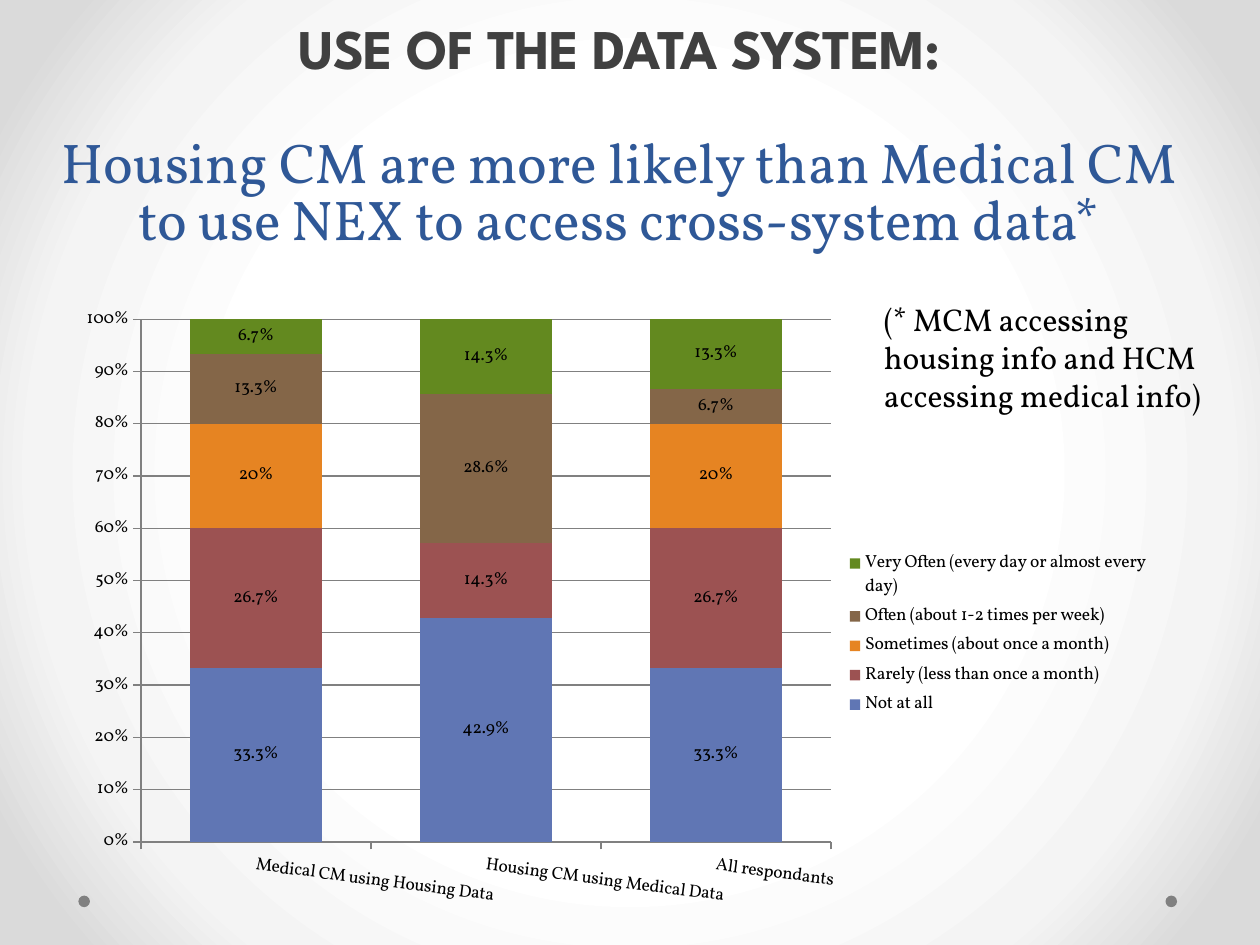
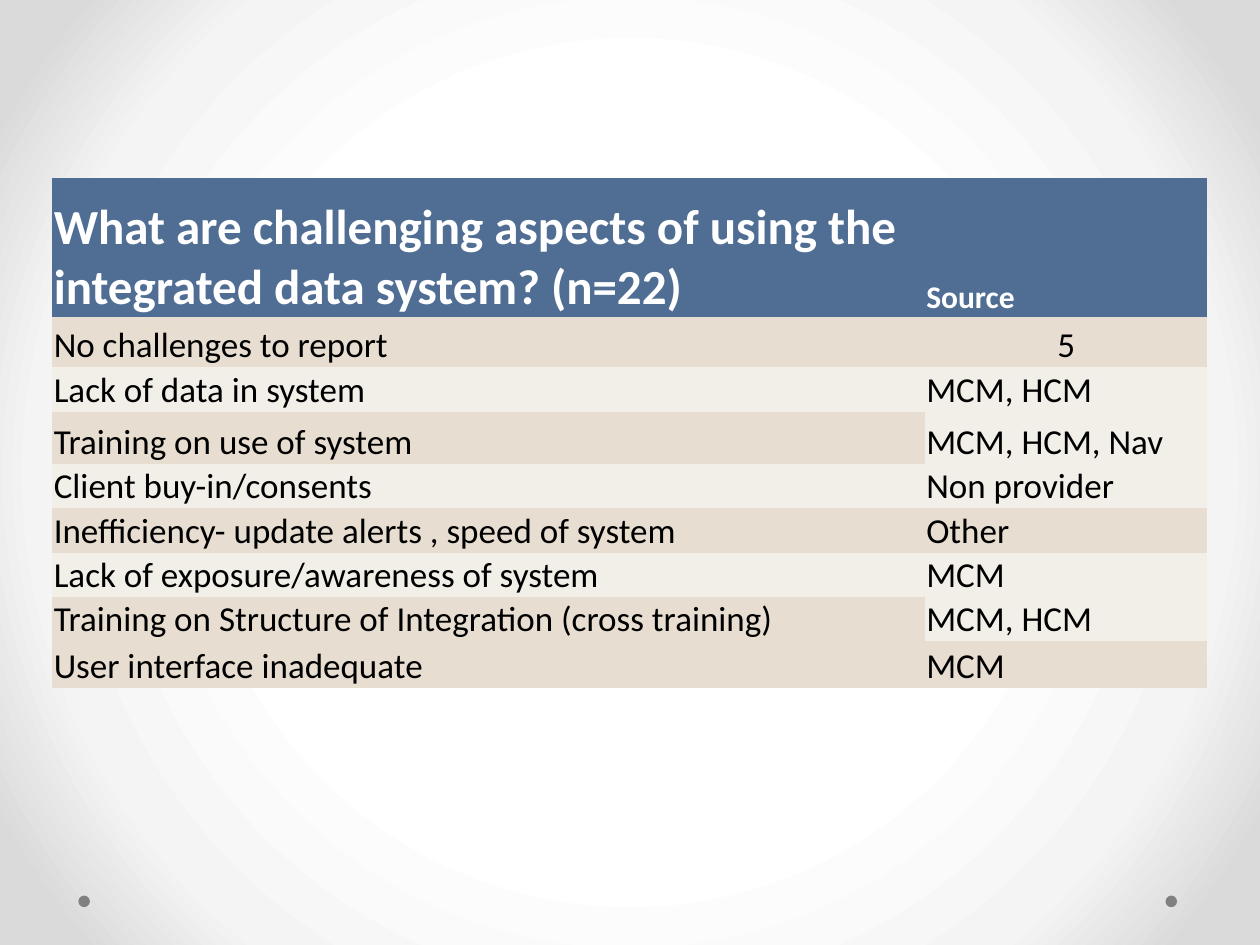
"""Build two slides on how case managers use the integrated data system."""
from lxml.etree import SubElement
from pptx import Presentation
from pptx.chart.data import CategoryChartData
from pptx.dml.color import RGBColor
from pptx.enum.chart import XL_CHART_TYPE, XL_LEGEND_POSITION, XL_TICK_MARK
from pptx.enum.shapes import MSO_SHAPE
from pptx.enum.text import MSO_ANCHOR, MSO_AUTO_SIZE, PP_ALIGN
from pptx.oxml import parse_xml
from pptx.oxml.ns import nsdecls, qn
from pptx.util import Pt

COLORS = {
    "white": "FFFFFF", "mist": "F4F4F4", "edge": "DADADA",
    "black": "000000", "heading": "404040", "subheading": "2F5897",
    "gray": "808080", "header": "506E94", "dark": "E7DED1", "light": "F2EEE8",
    "never": "6076B4", "rarely": "9C5252", "sometimes": "E68422",
    "often": "846648", "very often": "63891F",
}
SERIF = "Vollkorn"


def rgb(name):
    return RGBColor.from_string(COLORS[name])


def write(frame, text, size, font, color="black", bold=False, align=PP_ALIGN.LEFT,
          line=None, before=0, spacing=None, append=False):
    paragraph = frame.add_paragraph() if append else frame.paragraphs[0]
    paragraph.alignment = align
    paragraph.space_before = Pt(before)
    if line:
        paragraph.line_spacing = line
    run = paragraph.add_run()
    run.text = text
    run.font.size = Pt(size)
    run.font.name = font
    run.font.bold = bold
    run.font.color.rgb = rgb(color)
    if spacing is not None:
        run._r.get_or_add_rPr().set("spc", str(round(spacing * 100)))


prs = Presentation()
prs.slide_width, prs.slide_height = Pt(720), Pt(540)

master = prs.slide_master
master.background.fill.solid()
stops = "".join(
    f'<a:gs pos="{share * 1000}"><a:srgbClr val="{COLORS[name]}"/></a:gs>'
    for share, name in [(50, "white"), (76, "mist"), (92, "edge")])
glow = parse_xml(
    f'<a:gradFill {nsdecls("a")} rotWithShape="1"><a:gsLst>{stops}</a:gsLst>'
    '<a:path path="circle"><a:fillToRect l="50000" t="50000" r="50000" b="50000"/>'
    '</a:path></a:gradFill>')
background = master.element.find(".//" + qn("p:bgPr"))
background.replace(background[0], glow)

usage_slide = prs.slides.add_slide(prs.slide_layouts[5])
challenges_slide = prs.slides.add_slide(prs.slide_layouts[6])
for slide in (usage_slide, challenges_slide):
    for left in (666, 44.8):
        dot = slide.shapes.add_shape(MSO_SHAPE.OVAL, Pt(left), Pt(511.8), Pt(6.6), Pt(6.6))
        dot.shadow.inherit = False
        dot.fill.solid()
        dot.fill.fore_color.rgb = rgb("gray")
        dot.line.fill.background()

heading = usage_slide.shapes.title
heading.left, heading.top, heading.width, heading.height = Pt(24), Pt(18), Pt(660), Pt(129.6)
heading.text_frame.auto_size = MSO_AUTO_SIZE.NONE
heading.text_frame.vertical_anchor = MSO_ANCHOR.BOTTOM
write(heading.text_frame, "USE OF THE DATA SYSTEM:", 32, "League Spartan", "heading",
      bold=True, align=PP_ALIGN.CENTER, line=0.85, spacing=-0.5)
write(heading.text_frame,
      "Housing CM are more likely than Medical CM to use NEX to access cross-system data*",
      32, SERIF, "subheading", align=PP_ALIGN.CENTER, line=0.85, before=32.5, spacing=0,
      append=True)

FREQUENCIES = [
    ("Not at all", (0.333, 0.429, 0.333), "never", "0.0%"),
    ("Rarely (less than once a month)", (0.267, 0.143, 0.267), "rarely", "0.0%"),
    ("Sometimes (about once a month)", (0.2, 0, 0.2), "sometimes", "0%;;"),
    ("Often (about 1-2 times per week)", (0.133, 0.286, 0.067), "often", "0.0%"),
    ("Very Often (every day or almost every day)", (0.067, 0.143, 0.133), "very often", "0.0%"),
]
usage_data = CategoryChartData(number_format="0.0%")
usage_data.categories = ["Medical CM using Housing Data", "Housing CM using Medical Data",
                         "All respondants"]
for name, shares, color, number_format in FREQUENCIES:
    usage_data.add_series(name, shares)
usage = usage_slide.shapes.add_chart(
    XL_CHART_TYPE.COLUMN_STACKED_100, Pt(36), Pt(168), Pt(636), Pt(360), usage_data).chart
usage.has_title = False
usage.font.size = Pt(10)
usage.font.name = SERIF
usage.font.color.rgb = rgb("black")
usage.has_legend = True
usage.legend.position = XL_LEGEND_POSITION.RIGHT
usage.legend.include_in_layout = False

bars = usage.plots[0]
bars.gap_width, bars.overlap, bars.vary_by_categories = 75, 100, False
for series, (name, shares, color, number_format) in zip(bars.series, FREQUENCIES):
    series.format.fill.solid()
    series.format.fill.fore_color.rgb = rgb(color)
    labels = series.data_labels
    labels.show_value = True
    labels.number_format = number_format
    labels.number_format_is_linked = False

shares_axis, groups_axis = usage.value_axis, usage.category_axis
shares_axis.has_major_gridlines = True
shares_axis.tick_labels.number_format = "0%"
shares_axis.tick_labels.number_format_is_linked = False
for axis in (shares_axis, groups_axis):
    axis.major_tick_mark = XL_TICK_MARK.OUTSIDE
    axis.minor_tick_mark = XL_TICK_MARK.NONE
    axis.tick_labels.font.size = Pt(10)
for rule in (shares_axis, groups_axis, shares_axis.major_gridlines):
    rule.format.line.color.rgb = rgb("gray")
    rule.format.line.width = Pt(0.75)
groups_axis._element.find(".//" + qn("a:bodyPr")).set("rot", "450000")

chart_space = usage._chartSpace
for part, target, box in [("c:plotArea", "inner", (0.07, 0.04, 0.62, 0.83)),
                          ("c:legend", None, (0.705, 0.4, 0.28, 0.28))]:
    area = chart_space.find(".//" + qn(part))
    layout = area.find(qn("c:layout"))
    if layout is None:
        layout = area.makeelement(qn("c:layout"))
        area.insert(0 if target else 1, layout)
    manual = SubElement(layout, qn("c:manualLayout"))
    if target:
        SubElement(manual, qn("c:layoutTarget")).set("val", target)
    for side in "xy":
        SubElement(manual, qn(f"c:{side}Mode")).set("val", "edge")
    for side, share in zip("xywh", box):
        SubElement(manual, qn(f"c:{side}")).set("val", f"{share:.2f}")

footnote = usage_slide.shapes.add_textbox(Pt(498), Pt(168), Pt(210), Pt(72.7)).text_frame
footnote.word_wrap = True
write(footnote, "(* MCM accessing housing info and HCM accessing medical info)", 18, SERIF)

CHALLENGES = [
    ("What are challenging aspects of using the integrated data system? (n=22)", "Source",
     "header", "header", 79.4),
    ("No challenges to report", "5", "dark", "dark", 28.6),
    ("Lack of data in system", "MCM, HCM", "light", "light", 25.7),
    ("Training on use of system", "MCM, HCM, Nav", "dark", "light", 29.7),
    ("Client buy-in/consents", "Non provider", "light", "light", 25.2),
    ("Inefficiency- update alerts , speed of system", "Other", "dark", "dark", 25.6),
    ("Lack of exposure/awareness of system", "MCM", "light", "light", 25.2),
    ("Training on Structure of Integration (cross training)", "MCM, HCM", "dark", "light", 25.2),
    ("User interface inadequate", "MCM", "dark", "dark", 26.9),
]
challenges = challenges_slide.shapes.add_table(
    len(CHALLENGES), 2, Pt(30), Pt(102), Pt(660), Pt(291.5)).table
challenges._tbl.tblPr.find(qn("a:tableStyleId")).text = "{2D5ABB26-0587-4C30-8999-92F81FD0307C}"
challenges.horz_banding = False
for column, width in zip(challenges.columns, (498.6, 161.4)):
    column.width = Pt(width)
for number, (challenge, source, challenge_fill, source_fill, height) in enumerate(CHALLENGES):
    challenges.rows[number].height = Pt(height)
    is_header = number == 0
    for place, (text, fill, header_size) in enumerate(
            [(challenge, challenge_fill, 28), (source, source_fill, 18)]):
        cell = challenges.cell(number, place)
        cell.fill.solid()
        cell.fill.fore_color.rgb = rgb(fill)
        cell.vertical_anchor = MSO_ANCHOR.BOTTOM
        cell.margin_left = cell.margin_right = cell.margin_top = Pt(0.75)
        cell.margin_bottom = Pt(0)
        write(cell.text_frame, text, header_size if is_header else 20, "Calibri",
              "white" if is_header else "black", bold=is_header,
              align=PP_ALIGN.CENTER if text.isdigit() else PP_ALIGN.LEFT)

prs.save("out.pptx")
